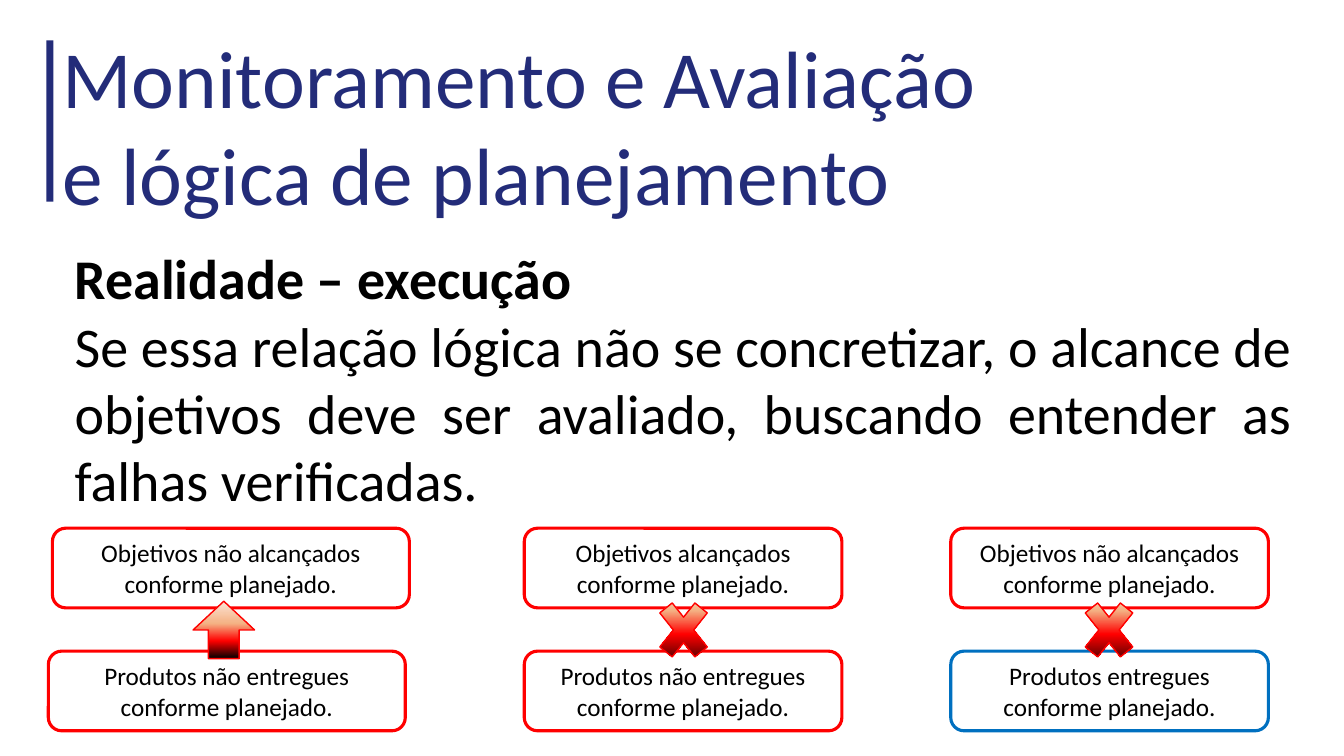
from lxml.etree import SubElement
from pptx import Presentation
from pptx.dml.color import RGBColor
from pptx.enum.shapes import MSO_SHAPE as SHAPE
from pptx.enum.text import MSO_ANCHOR as ANCHOR, MSO_AUTO_SIZE as AUTO, PP_ALIGN as ALIGN
from pptx.oxml.ns import qn
from pptx.util import Inches, Pt

COLORS = {"title": "232C79", "text": "000000", "box": "FFFFFF", "failed": "FF0000",
          "delivered": "0070C0", "pale": "FBE5D6", "peach": "F4B183"}
W, H = 13.33, 7.5
BOX_H, MARK_CENTER = 0.79, 6.25
ARROW = {"kind": SHAPE.UP_ARROW, "size": (0.61, 0.57), "stops": (0, 39, 69, 100)}
CROSS = {"kind": SHAPE.MATH_MULTIPLY, "size": (0.67, 0.84), "stops": (0, 27, 55, 100)}

# left of products, left of objectives, width, objectives, products, product outline,
# centre of mark, mark
CASES = [
    (0.48, 0.52, 3.54, "Objetivos não alcançados", "Produtos não entregues", "failed", 2.22, ARROW),
    (5.2, 5.2, 3.15, "Objetivos alcançados", "Produtos não entregues", "failed", 6.78, CROSS),
    (9.43, 9.43, 3.15, "Objetivos não alcançados", "Produtos entregues", "delivered", 11.0, CROSS),
]


def color(name):
    return RGBColor.from_string(COLORS[name])


def place(sp, x, y, w, h):
    sp.left, sp.top, sp.width, sp.height = (Inches(v) for v in (x, y, w, h))


def write(tf, lines, size, ink, align, anchor, bold_lines=0):
    """Fill a text frame with plain, unbulleted paragraphs."""
    for name, value in {"word_wrap": True, "vertical_anchor": anchor}.items():
        setattr(tf, name, value)
    for i, line in enumerate(lines):
        p = tf.paragraphs[0] if i == 0 else tf.add_paragraph()
        pPr = p._p.get_or_add_pPr()
        pPr.set("marL", "0")
        pPr.set("indent", "0")
        SubElement(pPr, qn("a:buNone"))
        for name, value in {"alignment": align, "line_spacing": 1.0,
                            "space_before": Pt(0), "space_after": Pt(0)}.items():
            setattr(p, name, value)
        r = p.add_run()
        r.text = line
        for name, value in {"name": "Calibri", "size": Pt(size), "bold": i < bold_lines}.items():
            setattr(r.font, name, value)
        r.font.color.rgb = color(ink)


def add_shape(s, kind, box, line=None, line_width=1):
    sp = s.shapes.add_shape(kind, *(Inches(v) for v in box))
    sp.shadow.inherit = False
    if line:
        sp.line.color.rgb = color(line)
        sp.line.width = Pt(line_width)
    else:
        sp.line.fill.background()
    return sp


def add_heading(s, x, y, w, h):
    title = s.shapes.title
    place(title, x, y, w, h)
    write(title.text_frame, ["Monitoramento e Avaliação", "e lógica de planejamento"],
          58, "title", ALIGN.LEFT, ANCHOR.TOP)
    title.text_frame.auto_size = AUTO.SHAPE_TO_FIT_TEXT
    bar = add_shape(s, SHAPE.RECTANGLE, (x - 0.06, y + 0.18, 0.07, 1.6))
    bar.fill.solid()
    bar.fill.fore_color.rgb = color("title")


def add_body(s, x, y, w, h):
    body = s.placeholders[1]
    place(body, x, y, w, h)
    write(body.text_frame, [
        "Realidade – execução",
        "Se essa relação lógica não se concretizar, o alcance de objetivos deve ser avaliado, "
        "buscando entender as falhas verificadas.",
    ], 40, "text", ALIGN.JUSTIFY, ANCHOR.TOP, bold_lines=1)
    body.text_frame.auto_size = AUTO.SHAPE_TO_FIT_TEXT


def add_box(s, x, y, w, subject, line):
    sp = add_shape(s, SHAPE.ROUNDED_RECTANGLE, (x, y, w, BOX_H), line, 2.25)
    sp.fill.solid()
    sp.fill.fore_color.rgb = color("box")
    write(sp.text_frame, [f"{subject} conforme planejado."], 18, "text",
          ALIGN.CENTER, ANCHOR.MIDDLE)


def add_mark(s, cx, cy, mark):
    """Arrow or cross with a vertical four-colour gradient, centred on a point."""
    w, h = mark["size"]
    sp = add_shape(s, mark["kind"], (cx - w / 2, cy - h / 2, w, h), "failed")
    sp.fill.gradient()
    sp.fill.gradient_angle = 270
    stops = sp._element.spPr.find(qn("a:gradFill")).find(qn("a:gsLst"))
    for stop in list(stops):
        stops.remove(stop)
    for pos, name in zip(mark["stops"], ("pale", "peach", "failed", "text")):
        stop = SubElement(stops, qn("a:gs"), pos=str(pos * 1000))
        SubElement(stop, qn("a:srgbClr"), val=COLORS[name])


def add_cases(s, top, bottom):
    for low_x, high_x, w, objective, product, outline, cx, mark in CASES:
        add_box(s, low_x, bottom - BOX_H, w, product, outline)
        add_box(s, high_x, top, w, objective, "failed")
        add_mark(s, cx, MARK_CENTER, mark)


def main():
    prs = Presentation()
    prs.slide_width, prs.slide_height = Inches(W), Inches(H)
    s = prs.slides.add_slide(prs.slide_layouts[1])
    add_heading(s, 0.52, 0.22, 11.72, 2.05)
    add_body(s, 0.64, 2.37, 12.27, 2.79)
    add_cases(s, top=5.24, bottom=7.25)
    prs.save("out.pptx")


if __name__ == "__main__":
    main()
